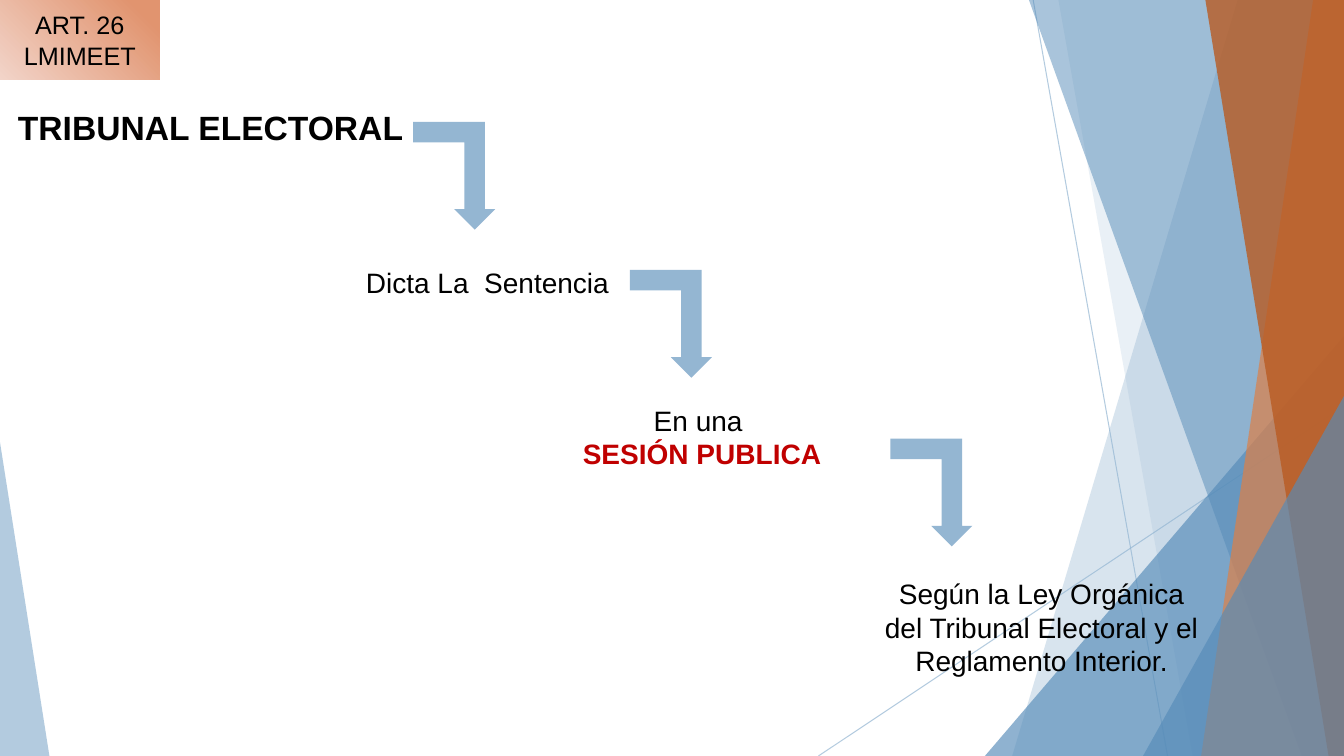
from pptx import Presentation
from pptx.dml.color import RGBColor
from pptx.enum.shapes import MSO_CONNECTOR, MSO_SHAPE
from pptx.enum.text import MSO_ANCHOR, PP_ALIGN
from pptx.oxml.ns import qn
from pptx.util import Pt
from lxml.etree import SubElement

WIDTH, HEIGHT = 960, 540
LIGHT_BLUE, BLUE = "94B6D2", "558BB8"
ORANGE, BROWN = "DD8047", "B95B22"
BLACK, RED = "000000", "C00000"


def color(hex_string):
    return RGBColor.from_string(hex_string)


def set_opacity(properties, percent):
    """Make the one solid colour inside a shape's properties translucent."""
    solid = next(properties.iter(qn("a:srgbClr")))
    SubElement(solid, qn("a:alpha"), val=str(percent * 1000))


def style_fill(shape, fill, opacity=None):
    shape.shadow.inherit = False
    shape.line.fill.background()
    shape.fill.solid()
    shape.fill.fore_color.rgb = color(fill)
    if opacity is not None:
        set_opacity(shape._element.spPr, opacity)


def add_thin_line(slide, start, end):
    line = slide.shapes.add_connector(MSO_CONNECTOR.STRAIGHT, *map(Pt, start + end))
    line.line.width = Pt(0.75)
    line.line.color.rgb = color(LIGHT_BLUE)
    properties = line._element.spPr
    set_opacity(properties, 70)
    SubElement(properties, qn("a:effectLst"))


def add_band(slide, top_left, top_right, bottom_right, bottom_left, fill, opacity):
    """Draw a full-height band from its x positions on the top and bottom edges."""
    builder = slide.shapes.build_freeform(top_left, 0, scale=Pt(1))
    builder.add_line_segments(
        [(top_right, 0), (bottom_right, HEIGHT), (bottom_left, HEIGHT)])
    style_fill(builder.convert_to_shape(), fill, opacity)


def add_corner_triangle(slide, left, top, width, apex, fill, opacity):
    """Draw a triangle on the bottom edge; apex is 0 for left, 1 for right."""
    triangle = slide.shapes.add_shape(
        MSO_SHAPE.ISOSCELES_TRIANGLE, Pt(left), Pt(top), Pt(width), Pt(HEIGHT - top))
    triangle.adjustments[0] = apex
    style_fill(triangle, fill, opacity)


def write_paragraph(paragraph, text, size, hex_color=BLACK, bold=False,
                    align=PP_ALIGN.CENTER):
    paragraph.text = text
    paragraph.alignment = align
    font = paragraph.font
    font.name, font.size, font.bold = "Arial", Pt(size), bold
    font.color.rgb = color(hex_color)


def add_text(slide, left, top, width, height, *lines, size=20,
             anchor=MSO_ANCHOR.TOP, align=PP_ALIGN.CENTER):
    """Each line is (text, colour, bold)."""
    box = slide.shapes.add_textbox(Pt(left), Pt(top), Pt(width), Pt(height))
    frame = box.text_frame
    frame.word_wrap = True
    frame.vertical_anchor = anchor
    for index, (text, hex_color, bold) in enumerate(lines):
        paragraph = frame.add_paragraph() if index else frame.paragraphs[0]
        write_paragraph(paragraph, text, size, hex_color, bold, align)


def add_article_tag(slide):
    tag = slide.shapes.add_shape(MSO_SHAPE.RECTANGLE, 0, 0, Pt(114), Pt(57))
    tag.shadow.inherit = False
    tag.line.fill.background()
    tag.fill.gradient()
    tag.fill.gradient_angle = 45
    stops = ((0, "F2D4C9"), (0.88, "E1946F"))
    for stop, (position, hex_color) in zip(tag.fill.gradient_stops, stops):
        stop.position = position
        stop.color.rgb = color(hex_color)
    frame = tag.text_frame
    frame.word_wrap = True
    frame.vertical_anchor = MSO_ANCHOR.MIDDLE
    write_paragraph(frame.paragraphs[0], "ART. 26 LMIMEET", 18)


def add_step_arrow(slide, left, top):
    arrow = slide.shapes.add_shape(
        MSO_SHAPE.BENT_UP_ARROW, Pt(left), Pt(top), Pt(58.5), Pt(77))
    arrow._element.spPr.xfrm.set("flipV", "1")
    style_fill(arrow, LIGHT_BLUE)


def add_backdrop(slide):
    add_thin_line(slide, (738, 0), (834, HEIGHT))
    add_thin_line(slide, (WIDTH, 290), (584.6, HEIGHT))
    add_band(slide, 884, WIDTH, WIDTH, 723, LIGHT_BLUE, 36)
    add_band(slide, 756, WIDTH, WIDTH, 852, LIGHT_BLUE, 20)
    add_corner_triangle(slide, 703.5, 240, 256.5, 1, BLUE, 66)
    add_band(slide, 735, WIDTH, WIDTH, 929.5, BLUE, 50)
    add_band(slide, 938, WIDTH, WIDTH, 858, ORANGE, 70)
    add_band(slide, 861, WIDTH, WIDTH, 949, BROWN, 80)
    add_corner_triangle(slide, 816.5, 283, 143.5, 1, BLUE, 66)
    add_corner_triangle(slide, 0, 316, 35.3, 0, LIGHT_BLUE, 70)


def main():
    presentation = Presentation()
    presentation.slide_width, presentation.slide_height = Pt(WIDTH), Pt(HEIGHT)
    slide = presentation.slides.add_slide(presentation.slide_layouts[6])
    add_backdrop(slide)
    add_text(slide, -21.6, 74.2, 344, 32.4, ("TRIBUNAL ELECTORAL", BLACK, True),
             size=24, anchor=MSO_ANCHOR.MIDDLE)
    add_text(slide, 254.2, 185.8, 195.8, 31.5, ("Dicta La  Sentencia", BLACK, False),
             align=PP_ALIGN.LEFT)
    add_text(slide, 381.6, 284.4, 239.8, 55.7,
             ("En una ", BLACK, False), ("SESIÓN PUBLICA", RED, True))
    add_text(slide, 624, 408.2, 240, 80,
             ("Según la Ley Orgánica del Tribunal Electoral y el Reglamento Interior.",
              BLACK, False))
    add_article_tag(slide)
    for left, top in ((295.2, 87.1), (450, 192.8), (636, 313.3)):
        add_step_arrow(slide, left, top)
    presentation.save("out.pptx")


if __name__ == "__main__":
    main()
